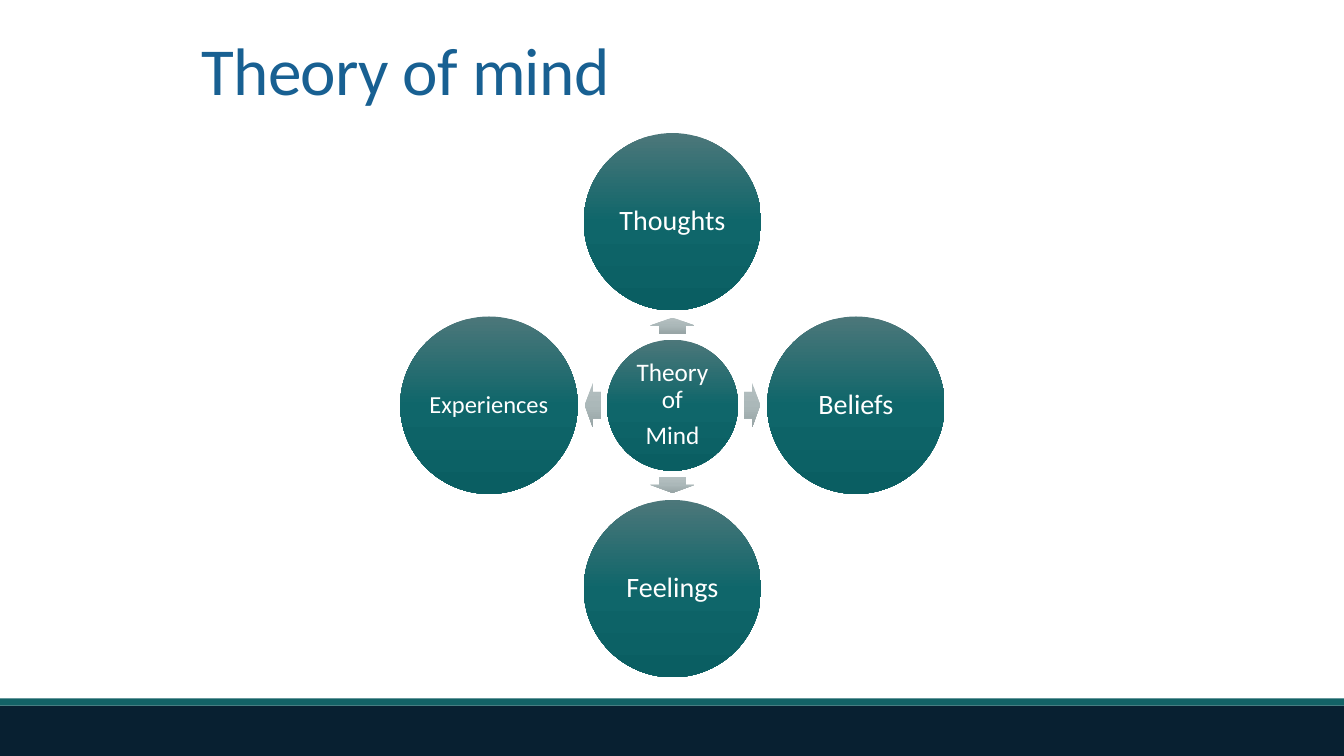
from lxml import etree
from pptx import Presentation
from pptx.dml.color import RGBColor
from pptx.enum.shapes import MSO_SHAPE
from pptx.enum.text import MSO_ANCHOR, MSO_AUTO_SIZE, PP_ALIGN
from pptx.oxml.ns import qn
from pptx.util import Inches, Pt

RECT, OVAL, ARROW = MSO_SHAPE.RECTANGLE, MSO_SHAPE.OVAL, MSO_SHAPE.RIGHT_ARROW
LEFT, CENTER = PP_ALIGN.LEFT, PP_ALIGN.CENTER
MIDDLE, BOTTOM = MSO_ANCHOR.MIDDLE, MSO_ANCHOR.BOTTOM
NO_FIT = MSO_AUTO_SIZE.NONE

COLORS = {"title": "186092", "text": "FFFFFF", "navy": "082031", "teal": "136266"}
SHADES = {
    "circle": ["4C777A", "0F666A", "0A5E62"],
    "arrow": ["B5C0C1", "ABB8B9", "97A4A5"],
}
WIDTH, HEIGHT = 13.33, 7.5


def apply(target, values):
    for name, value in values.items():
        setattr(target, name, value)


class Canvas:
    def __init__(self, slide, font):
        self.slide, self.font = slide, font

    def label(self, frame, lines, size, color, para):
        frame.text = "\n".join(lines)
        for item in frame.paragraphs:
            apply(item, para)
            for run in item.runs:
                apply(run.font, {"name": self.font, "size": Pt(size)})
                run.font.color.rgb = RGBColor.from_string(COLORS[color])

    def title(self, text, box):
        shape = self.slide.shapes.title
        apply(shape, dict(zip(("left", "top", "width", "height"), map(Inches, box))))
        frame = shape.text_frame
        apply(frame, {"vertical_anchor": BOTTOM, "word_wrap": True, "auto_size": NO_FIT})
        self.label(frame, [text], 48, "title", {"alignment": LEFT, "line_spacing": 0.85})
        frame.paragraphs[0].runs[0]._r.get_or_add_rPr().set("spc", "-50")

    def shape(self, kind, box):
        shape = self.slide.shapes.add_shape(kind, *map(Inches, box))
        shape.shadow.inherit = False
        shape.line.fill.background()
        return shape

    def bar(self, top, height, color):
        bar = self.shape(RECT, (0, top, WIDTH, height))
        bar.fill.solid()
        bar.fill.fore_color.rgb = RGBColor.from_string(COLORS[color])

    def shade(self, shape, name):
        """Fill with three even stops that run down the page, even when rotated."""
        shape.fill.gradient()
        grad = shape._element.spPr.find(qn("a:gradFill"))
        grad.set("rotWithShape", "0")
        for child in list(grad):
            grad.remove(child)
        stops = etree.SubElement(grad, qn("a:gsLst"))
        for i, color in enumerate(SHADES[name]):
            stop = etree.SubElement(stops, qn("a:gs"), pos=str(i * 50000))
            etree.SubElement(stop, qn("a:srgbClr"), val=color)
        etree.SubElement(grad, qn("a:lin"), ang="5400000", scaled="0")

    def circle(self, x, y, size, lines, points):
        circle = self.shape(OVAL, (x - size / 2, y - size / 2, size, size))
        self.shade(circle, "circle")
        frame = circle.text_frame
        sides = ("left", "top", "right", "bottom")
        apply(frame, {f"margin_{side}": Inches(0.03) for side in sides})
        apply(frame, {"vertical_anchor": MIDDLE, "word_wrap": True})
        para = {"alignment": CENTER, "line_spacing": 0.9, "space_after": Pt(points * 0.35)}
        self.label(frame, lines, points, "text", para)

    def arrow(self, x, y, turn):
        long, wide = 0.16, 0.44
        arrow = self.shape(ARROW, (x - long / 2, y - wide / 2, long, wide))
        arrow.adjustments[0], arrow.adjustments[1] = 0.6, 0.5
        arrow.rotation = turn
        self.shade(arrow, "arrow")


def main():
    deck = Presentation()
    apply(deck, {"slide_width": Inches(WIDTH), "slide_height": Inches(HEIGHT)})
    canvas = Canvas(deck.slides.add_slide(deck.slide_layouts[5]), "Calibri")
    canvas.bar(7, 0.5, "navy")
    canvas.bar(6.93, 0.07, "teal")
    canvas.title("Theory of mind", (1.9, -0.46, 8.25, 1.59))

    x, y = 6.67, 4.02
    canvas.circle(x, y, 1.3, ["Theory of", "Mind"], 18)
    spokes = [
        ("Thoughts", 20, 0, -1, 270),
        ("Beliefs", 20, 1, 0, 0),
        ("Feelings", 20, 0, 1, 90),
        ("Experiences", 17.5, -1, 0, 180),
    ]
    for name, points, dx, dy, turn in spokes:
        canvas.arrow(x + 0.79 * dx, y + 0.79 * dy, turn)
        canvas.circle(x + 1.82 * dx, y + 1.82 * dy, 1.76, [name], points)
    deck.save("out.pptx")


if __name__ == "__main__":
    main()
